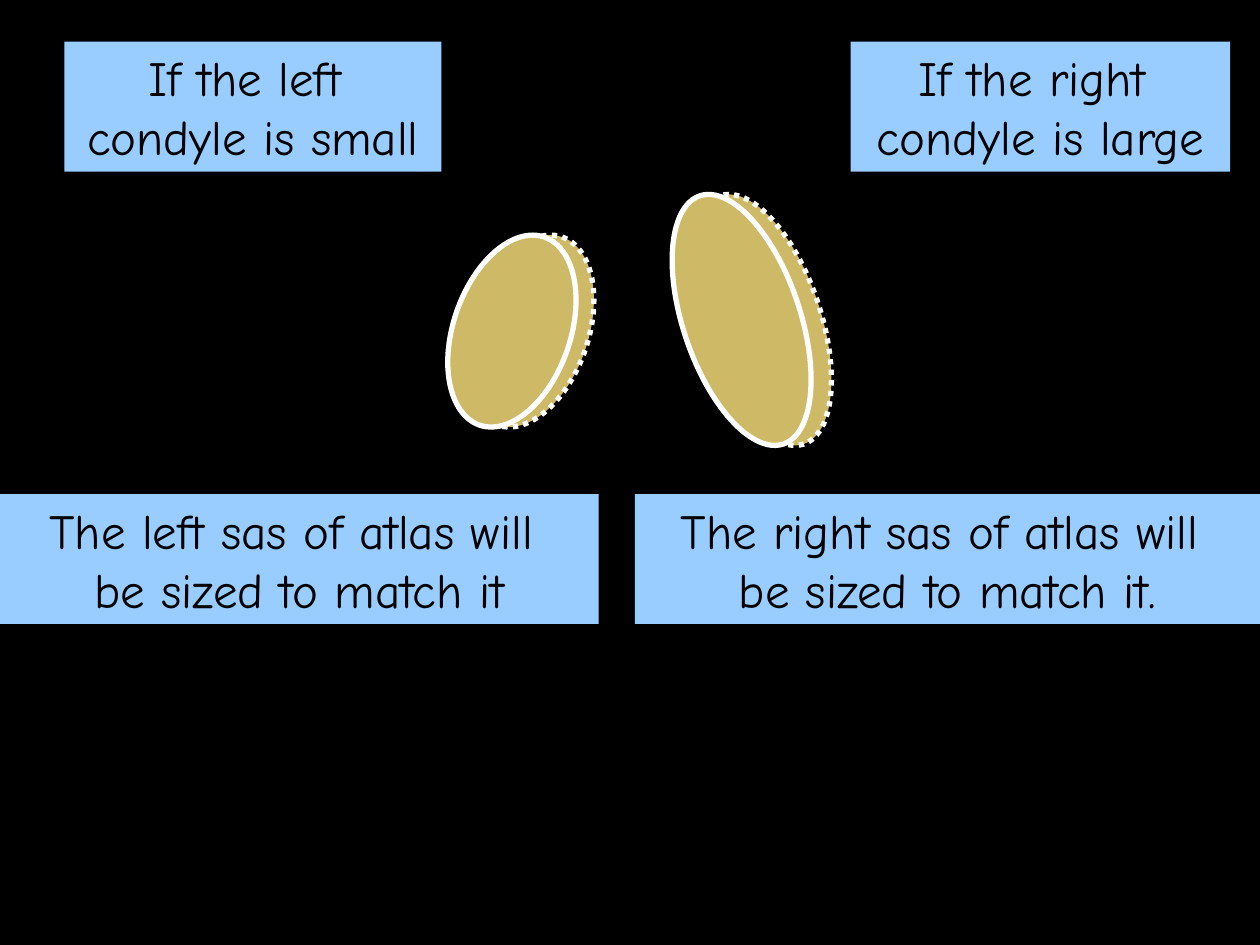
from dataclasses import dataclass

from pptx import Presentation as new_presentation
from pptx.dml.color import RGBColor as Rgb
from pptx.enum.dml import MSO_LINE_DASH_STYLE as Dash
from pptx.enum.shapes import MSO_SHAPE as Preset
from pptx.enum.text import MSO_ANCHOR as Anchor, MSO_AUTO_SIZE as AutoSize, PP_ALIGN as Align
from pptx.shapes.autoshape import Shape
from pptx.slide import Slide
from pptx.util import Cm, Pt

COLOURS = {
    "background": "000000",
    "label": "99CCFF",
    "text": "000000",
    "condyle": "CEB966",
    "outline": "FFFFFF",
}
FONT_FORMAT = {"name": "Comic Neue", "size": Pt(28)}
FRAME_FORMAT = {
    "word_wrap": False,
    "auto_size": AutoSize.SHAPE_TO_FIT_TEXT,
    "vertical_anchor": Anchor.TOP,
}
CONDITION_TOP = 0.84
RESULT_TOP = 9.96
LABEL_HEIGHT = 2.62
CONDYLE_WIDTH = 2.36


@dataclass(frozen=True)
class Label:
    left: float
    top: float
    width: float
    lines: tuple[str, ...]


@dataclass(frozen=True)
class Condyle:
    left: float
    top: float
    height: float
    rotation: float
    depth: float


LABELS = (
    Label(17.15, CONDITION_TOP, 7.65, ("If the right ", "condyle is large")),
    Label(12.8, RESULT_TOP, 12.6, ("The right sas of atlas will ", "be sized to match it.")),
    Label(1.3, CONDITION_TOP, 7.6, ("If the left ", "condyle is small")),
    Label(0, RESULT_TOP, 12.07, ("The left sas of atlas will ", "be sized to match it")),
)
CONDYLES = (
    Condyle(9.14, 4.67, 4.01, 19, 0.36),
    Condyle(13.77, 3.81, 5.28, 341.4, 0.41),
)


def colour(name: str) -> Rgb:
    return Rgb.from_string(COLOURS[name])


def apply_format(target: object, values: dict[str, object]) -> None:
    for name, value in values.items():
        setattr(target, name, value)


def add_filled_shape(slide: Slide, preset: Preset, left: float, top: float,
                     width: float, height: float, fill: str) -> Shape:
    shape = slide.shapes.add_shape(preset, Cm(left), Cm(top), Cm(width), Cm(height))
    shape.shadow.inherit = False
    shape.fill.solid()
    shape.fill.fore_color.rgb = colour(fill)
    return shape


def draw_label(slide: Slide, label: Label) -> None:
    shape = add_filled_shape(slide, Preset.RECTANGLE, label.left, label.top,
                             label.width, LABEL_HEIGHT, "label")
    shape.line.fill.background()
    frame = shape.text_frame
    apply_format(frame, FRAME_FORMAT)
    frame.text = "\n".join(label.lines)
    for paragraph in frame.paragraphs:
        paragraph.alignment = Align.CENTER
        for run in paragraph.runs:
            apply_format(run.font, FONT_FORMAT)
            run.font.color.rgb = colour("text")


def draw_condyle(slide: Slide, condyle: Condyle) -> None:
    for offset, dash in ((condyle.depth, Dash.ROUND_DOT), (0, Dash.SOLID)):
        shape = add_filled_shape(slide, Preset.OVAL, condyle.left + offset, condyle.top,
                                 CONDYLE_WIDTH, condyle.height, "condyle")
        shape.rotation = condyle.rotation
        shape.line.color.rgb = colour("outline")
        apply_format(shape.line, {"width": Pt(3), "dash_style": dash})


def main() -> None:
    presentation = new_presentation()
    apply_format(presentation, {"slide_width": Cm(25.4), "slide_height": Cm(19.05)})
    slide = presentation.slides.add_slide(presentation.slide_layouts[6])
    slide.background.fill.solid()
    slide.background.fill.fore_color.rgb = colour("background")
    for label in LABELS:
        draw_label(slide, label)
    for condyle in CONDYLES:
        draw_condyle(slide, condyle)
    presentation.save("out.pptx")


if __name__ == "__main__":
    main()
